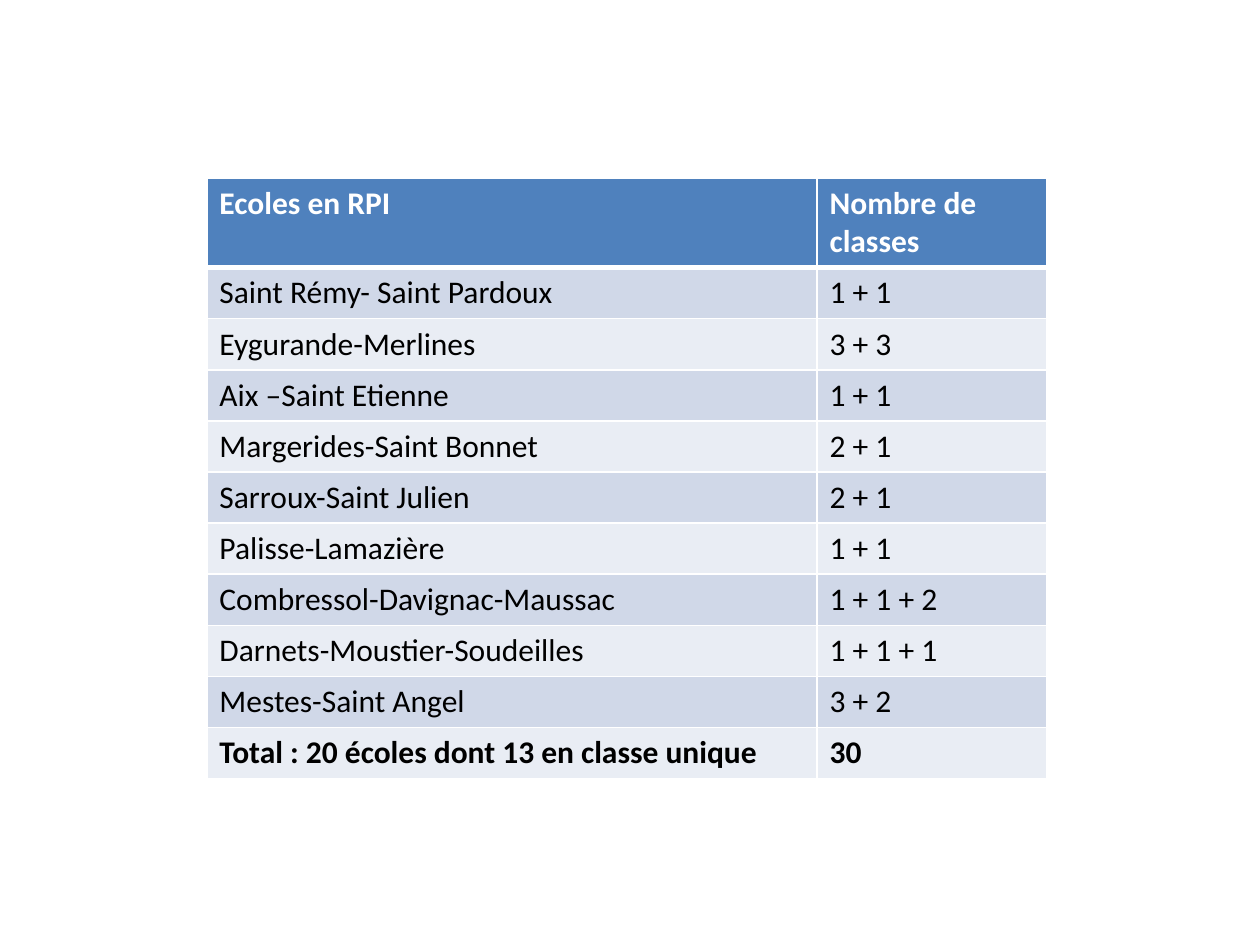
from dataclasses import dataclass

from lxml import etree
from pptx import Presentation
from pptx.dml.color import RGBColor
from pptx.oxml.ns import qn
from pptx.util import Cm, Pt


@dataclass(frozen=True)
class Theme:
    font: str = "Calibri"
    size: int = 18
    header: str = "4F81BD"
    bands: tuple = ("D0D8E8", "E9EDF4")
    white: str = "FFFFFF"
    black: str = "000000"
    thin: int = 1
    thick: int = 3


theme = Theme()

rows = [
    ("Ecoles en RPI", "Nombre de classes"),
    ("Saint Rémy- Saint Pardoux", "1 + 1"),
    ("Eygurande-Merlines", "3 + 3"),
    ("Aix –Saint Etienne", "1 + 1"),
    ("Margerides-Saint Bonnet", "2 + 1"),
    ("Sarroux-Saint Julien", "2 + 1"),
    ("Palisse-Lamazière", "1 + 1"),
    ("Combressol-Davignac-Maussac", "1 + 1 + 2"),
    ("Darnets-Moustier-Soudeilles", "1 + 1 + 1"),
    ("Mestes-Saint Angel", "3 + 2"),
    ("Total : 20 écoles dont 13 en classe unique", "30"),
]
col_widths = (Cm(12.3), Cm(4.63))
header_height, row_height = Cm(1.78), Cm(1.03)


def add_border(cell, side, width):
    """Draw one white edge; call in the order L, R, T, B and before the fill."""
    tcPr = cell._tc.get_or_add_tcPr()
    ln = etree.SubElement(tcPr, qn(f"a:ln{side}"), w=str(Pt(width)))
    fill = etree.SubElement(ln, qn("a:solidFill"))
    etree.SubElement(fill, qn("a:srgbClr"), val=theme.white)


prs = Presentation()
prs.slide_width, prs.slide_height = Cm(25.4), Cm(19.05)
s = prs.slides.add_slide(prs.slide_layouts[6])

table_height = header_height + row_height * (len(rows) - 1)
table = s.shapes.add_table(
    len(rows), len(col_widths), Cm(4.17), Cm(3.59), sum(col_widths), table_height
).table
for column, width in zip(table.columns, col_widths):
    column.width = width

for i, texts in enumerate(rows):
    is_header = i == 0
    is_total = i == len(rows) - 1
    table.rows[i].height = header_height if is_header else row_height
    fill_color = theme.header if is_header else theme.bands[(i - 1) % 2]
    top = theme.thick if i == 1 else theme.thin
    bottom = theme.thick if is_header else theme.thin
    for j, text in enumerate(texts):
        cell = table.cell(i, j)
        for side, width in zip("LRTB", (theme.thin, theme.thin, top, bottom)):
            add_border(cell, side, width)
        cell.fill.solid()
        cell.fill.fore_color.rgb = RGBColor.from_string(fill_color)
        cell.text_frame.text = text
        font = cell.text_frame.paragraphs[0].runs[0].font
        font.name = theme.font
        font.size = Pt(theme.size)
        font.bold = is_header or is_total
        font.color.rgb = RGBColor.from_string(theme.white if is_header else theme.black)

prs.save("out.pptx")
